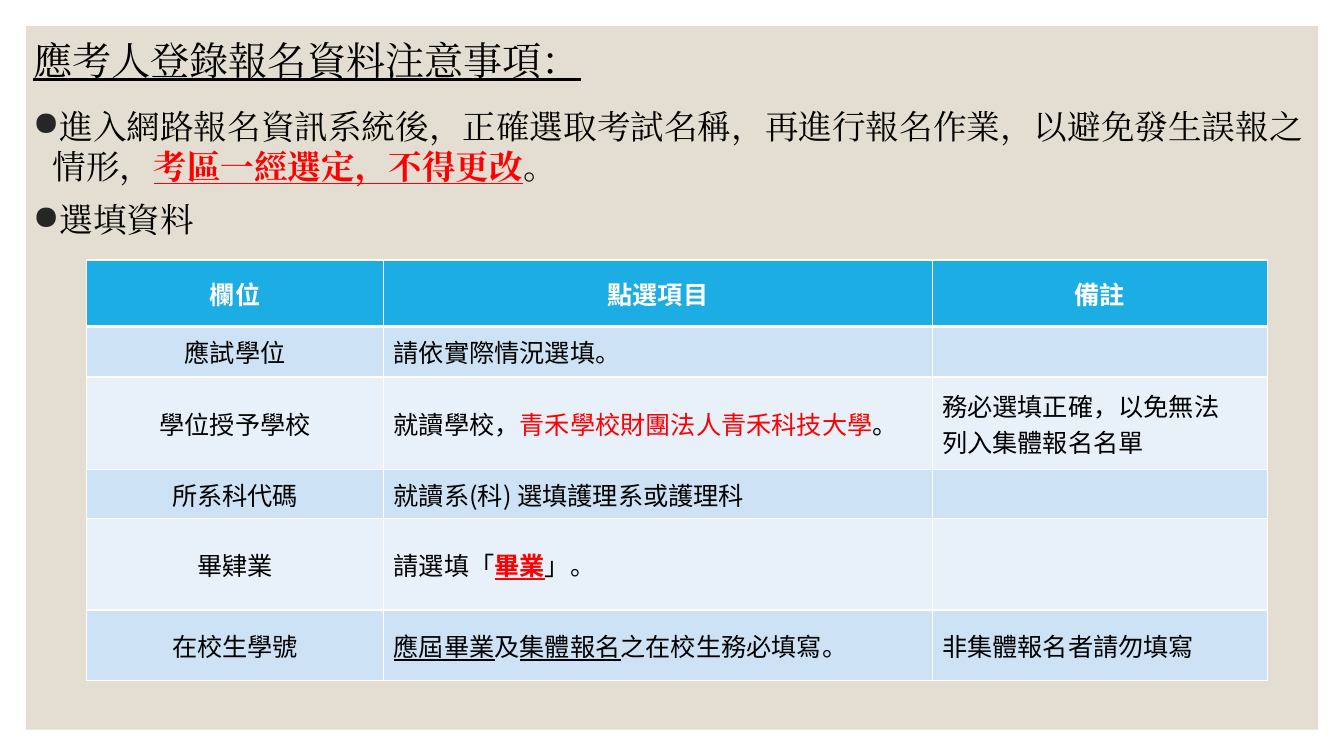
"""Build the slide with notes on filling in exam registration data."""
from dataclasses import dataclass
from typing import NamedTuple

from lxml import etree
from pptx import Presentation
from pptx.dml.color import RGBColor
from pptx.enum.shapes import MSO_SHAPE
from pptx.enum.text import MSO_ANCHOR, MSO_AUTO_SIZE, PP_ALIGN
from pptx.oxml.ns import qn
from pptx.util import Cm, Pt

RECT = MSO_SHAPE.RECTANGLE
MIDDLE, TOP = MSO_ANCHOR.MIDDLE, MSO_ANCHOR.TOP
LEFT, CENTER = PP_ALIGN.LEFT, PP_ALIGN.CENTER
NO_FIT = MSO_AUTO_SIZE.NONE


@dataclass(frozen=True)
class Theme:
    panel: str = "E3DED1"
    ink: str = "000000"
    alert: str = "FF0000"
    white: str = "FFFFFF"
    bullet: str = "262626"
    header: str = "1CADE4"
    bands: tuple[str, str] = ("CDE3F5", "E8F1FA")
    text_font: str = "Times New Roman"
    table_font: str = "Noto Sans CJK SC"
    title_pt: int = 28
    body_pt: int = 24
    table_pt: int = 18
    rule_pt: int = 1
    header_rule_pt: int = 3


class Span(NamedTuple):
    text: str
    color: str
    bold: bool = False
    underline: bool = False


class Box(NamedTuple):
    left: float
    top: float
    width: float
    height: float


Line = list[Span]
T = Theme()

PANEL = Box(0.66, 0.66, 32.56, 17.73)
TITLE = Box(0.58, 0.38, 32.56, 2.39)
BODY = Box(0.58, 2.54, 32.56, 3.66)
TABLE_LEFT, TABLE_TOP = 2.18, 6.55
COLUMNS = [7.49, 13.82, 8.46]
ROWS = [1.68, 1.27, 2.34, 1.22, 2.31, 1.78]


def plain(text: str) -> Line:
    return [Span(text, T.ink)]


def heading(text: str) -> list[Line]:
    return [[Span(text, T.white, bold=True)]]


HEADING = [Span("應考人登錄報名資料注意事項：", T.ink, underline=True)]
NOTES = [
    [
        Span("進入網路報名資訊系統後，正確選取考試名稱，再進行報名作業，以避免發生誤報之情形，", T.ink),
        Span("考區一經選定，不得更改", T.alert, True, True),
        Span("。", T.ink),
    ],
    plain("選填資料"),
]
FIELDS: list[list[list[Line]]] = [
    [heading("欄位"), heading("點選項目"), heading("備註")],
    [[plain("應試學位")], [plain("請依實際情況選填。")], []],
    [
        [plain("學位授予學校")],
        [[Span("就讀學校，", T.ink), Span("青禾學校財團法人青禾科技大學", T.alert), Span("。", T.ink)]],
        [plain("務必選填正確，以免無法"), plain("列入集體報名名單")],
    ],
    [[plain("所系科代碼")], [plain("就讀系(科) 選填護理系或護理科")], []],
    [
        [plain("畢肄業")],
        [[Span("請選填「", T.ink), Span("畢業", T.alert, True, True), Span("」。", T.ink)]],
        [],
    ],
    [
        [plain("在校生學號")],
        [[
            Span("應屆畢業", T.ink, underline=True),
            Span("及", T.ink),
            Span("集體報名", T.ink, underline=True),
            Span("之在校生務必填寫。", T.ink),
        ]],
        [plain("非集體報名者請勿填寫")],
    ],
]


def rgb(color: str) -> RGBColor:
    return RGBColor.from_string(color)


def lengths(box: Box) -> list[Cm]:
    return [Cm(value) for value in box]


def write(tf, lines: list[Line], font: str, size: int, align=LEFT) -> None:
    for i, line in enumerate(lines):
        p = tf.add_paragraph() if i else tf.paragraphs[0]
        p.alignment = align
        for span in line:
            r = p.add_run()
            r.text = span.text
            r.font.size = Pt(size)
            r.font.bold = span.bold
            r.font.underline = span.underline
            r.font.color.rgb = rgb(span.color)
            r.font.name = font
            etree.SubElement(r.font._element, qn("a:ea"), typeface=font)


def add_bullet(p) -> None:
    pPr = p._p.get_or_add_pPr()
    pPr.set("marL", str(Cm(0.5)))
    pPr.set("indent", str(-Cm(0.5)))
    color = etree.SubElement(pPr, qn("a:buClr"))
    etree.SubElement(color, qn("a:srgbClr"), val=T.bullet)
    etree.SubElement(pPr, qn("a:buChar"), char="●")


def set_borders(cell, top: int, bottom: int) -> None:
    tcPr = cell._tc.get_or_add_tcPr()
    sides = [("L", T.rule_pt), ("R", T.rule_pt), ("T", top), ("B", bottom)]
    for i, (side, width) in enumerate(sides):
        ln = etree.Element(qn(f"a:ln{side}"), w=str(Pt(width)))
        fill = etree.SubElement(ln, qn("a:solidFill"))
        etree.SubElement(fill, qn("a:srgbClr"), val=T.white)
        tcPr.insert(i, ln)


def add_panel(s) -> None:
    sp = s.shapes.add_shape(RECT, *lengths(PANEL))
    sp.shadow.inherit = False
    sp.fill.solid()
    sp.fill.fore_color.rgb = rgb(T.panel)
    sp.line.fill.background()
    s.shapes._spTree.insert(2, sp._element)


def add_title(s) -> None:
    sp = s.shapes.title
    sp.left, sp.top, sp.width, sp.height = lengths(TITLE)
    tf = sp.text_frame
    tf.auto_size, tf.vertical_anchor = NO_FIT, MIDDLE
    write(tf, [HEADING], T.text_font, T.title_pt)
    tf.paragraphs[0].line_spacing = 0.9


def add_notes(s) -> None:
    tf = s.shapes.add_textbox(*lengths(BODY)).text_frame
    tf.word_wrap, tf.vertical_anchor = True, TOP
    write(tf, NOTES, T.text_font, T.body_pt)
    for p in tf.paragraphs:
        p.space_before = Pt(9)
        add_bullet(p)


def add_fields(s) -> None:
    box = Box(TABLE_LEFT, TABLE_TOP, sum(COLUMNS), sum(ROWS))
    table = s.shapes.add_table(len(ROWS), len(COLUMNS), *lengths(box)).table
    for column, width in zip(table.columns, COLUMNS):
        column.width = Cm(width)
    for i, (row, height) in enumerate(zip(table.rows, ROWS)):
        row.height = Cm(height)
        for j, cell in enumerate(row.cells):
            cell.vertical_anchor = MIDDLE
            cell.fill.solid()
            cell.fill.fore_color.rgb = rgb(T.bands[(i - 1) % 2] if i else T.header)
            set_borders(
                cell,
                T.header_rule_pt if i == 1 else T.rule_pt,
                T.header_rule_pt if i == 0 else T.rule_pt,
            )
            align = CENTER if i == 0 or j == 0 else LEFT
            write(cell.text_frame, FIELDS[i][j], T.table_font, T.table_pt, align)


def main() -> None:
    prs = Presentation()
    prs.slide_width, prs.slide_height = Cm(33.87), Cm(19.05)
    s = prs.slides.add_slide(prs.slide_layouts[5])
    add_panel(s)
    add_title(s)
    add_notes(s)
    add_fields(s)
    prs.save("out.pptx")


if __name__ == "__main__":
    main()
